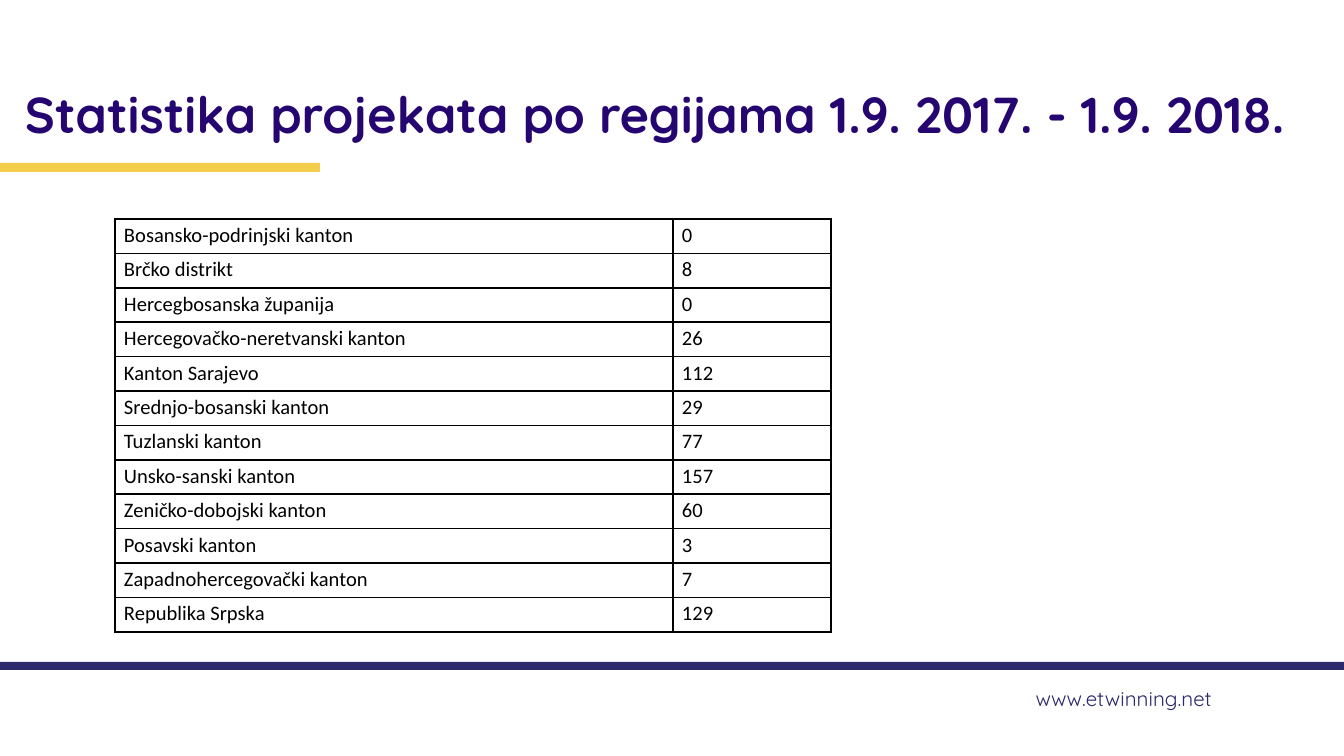
from lxml.etree import SubElement
from pptx import Presentation
from pptx.dml.color import RGBColor
from pptx.enum.shapes import MSO_SHAPE
from pptx.enum.text import MSO_ANCHOR, PP_ALIGN
from pptx.oxml.ns import qn
from pptx.util import Emu, Pt

PX_PER_INCH = 134.4
NAVY, YELLOW, PURPLE, BLACK = "2B296B", "F3CD4C", "250671", "000000"

REGIONS = [
    ("Bosansko-podrinjski kanton", 0),
    ("Brčko distrikt", 8),
    ("Hercegbosanska županija", 0),
    ("Hercegovačko-neretvanski kanton", 26),
    ("Kanton Sarajevo", 112),
    ("Srednjo-bosanski kanton", 29),
    ("Tuzlanski kanton", 77),
    ("Unsko-sanski kanton", 157),
    ("Zeničko-dobojski kanton", 60),
    ("Posavski kanton", 3),
    ("Zapadnohercegovački kanton", 7),
    ("Republika Srpska", 129),
]


def px(n):
    return Emu(round(n * 914400 / PX_PER_INCH))


def rgb(value):
    return RGBColor.from_string(value)


def set_attributes(target, values):
    for name, value in values.items():
        setattr(target, name, value)


def write(tf, text, font, color, **paragraph_format):
    p = tf.paragraphs[0]
    set_attributes(p, paragraph_format)
    r = p.add_run()
    r.text = text
    set_attributes(r.font, font)
    r.font.color.rgb = rgb(color)


def add_bar(s, box, color):
    sp = s.shapes.add_shape(MSO_SHAPE.RECTANGLE, *map(px, box))
    sp.shadow.inherit = False
    sp.fill.solid()
    sp.fill.fore_color.rgb = rgb(color)
    sp.line.fill.background()


def add_label(s, box, text, frame, font, color, **paragraph_format):
    tf = s.shapes.add_textbox(*map(px, box)).text_frame
    set_attributes(tf, {"word_wrap": True, "margin_left": px(9), "margin_right": px(9), **frame})
    write(tf, text, font, color, **paragraph_format)


def add_borders(cell, color, width):
    properties = cell._tc.get_or_add_tcPr()
    for side in ("a:lnL", "a:lnR", "a:lnT", "a:lnB"):
        line = SubElement(properties, qn(side), w=str(Pt(width)))
        fill = SubElement(line, qn("a:solidFill"))
        SubElement(fill, qn("a:srgbClr"), val=color)


def add_region_table(s, left, top, widths, height):
    shape = s.shapes.add_table(len(REGIONS), len(widths), px(left), px(top),
                               px(sum(widths)), px(height))
    table = shape.table
    set_attributes(table, {"first_row": False, "horz_banding": False})
    for column, width in zip(table.columns, widths):
        column.width = px(width)
    margins = {"margin_left": px(9), "margin_right": px(9), "margin_top": 0, "margin_bottom": 0}
    font = {"name": "Calibri", "size": Pt(11)}
    for row, values in zip(table.rows, REGIONS):
        row.height = px(height / len(REGIONS))
        for cell, value in zip(row.cells, values):
            set_attributes(cell, margins)
            add_borders(cell, BLACK, 1)
            cell.fill.background()
            write(cell.text_frame, str(value), font, BLACK, line_spacing=1.15)


def main():
    prs = Presentation()
    prs.slide_width, prs.slide_height = px(1344), px(756)
    s = prs.slides.add_slide(prs.slide_layouts[6])

    # Footer
    add_label(s, (1008, 684, 213, 36), "www.etwinning.net",
              {"margin_top": px(5), "margin_bottom": px(5)},
              {"name": "Quicksand", "size": Pt(11)}, NAVY,
              alignment=PP_ALIGN.RIGHT, line_spacing=0.9)
    add_bar(s, (0, 662, 1344, 8), NAVY)

    # Title with accent bar
    add_bar(s, (0, 163, 320, 9), YELLOW)
    add_label(s, (16, 71, 1292, 85),
              "Statistika projekata po regijama 1.9. 2017. - 1.9. 2018.",
              {"margin_top": px(9), "margin_bottom": px(9), "vertical_anchor": MSO_ANCHOR.MIDDLE},
              {"name": "Quicksand", "size": Pt(27), "bold": True}, PURPLE)

    # Projects by region
    add_region_table(s, 115, 219, (558, 158), 413)

    prs.save("out.pptx")


if __name__ == "__main__":
    main()
